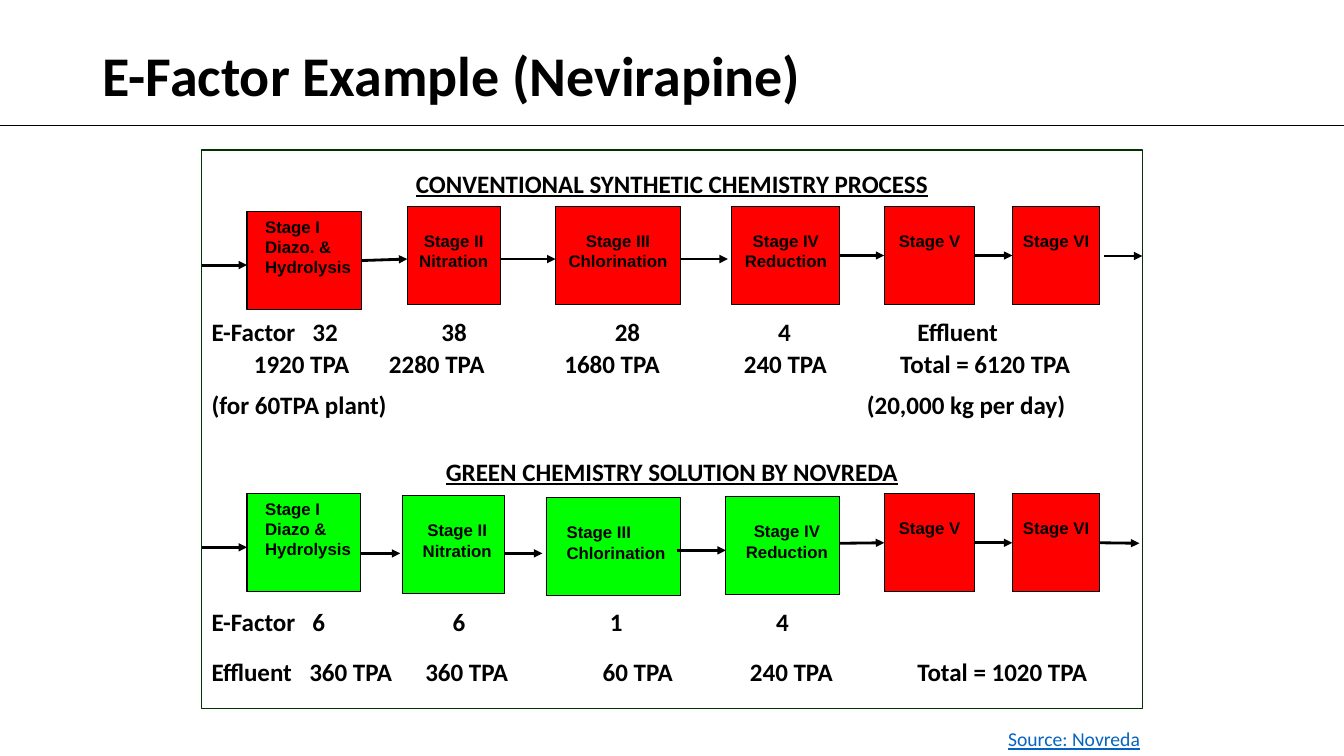
from lxml.etree import SubElement
from pptx import Presentation
from pptx.dml.color import RGBColor
from pptx.enum.shapes import MSO_CONNECTOR as Connector, MSO_SHAPE as Shape
from pptx.enum.text import MSO_ANCHOR as Anchor, PP_ALIGN as Align
from pptx.oxml.ns import qn
from pptx.util import Inches, Pt

BLACK = RGBColor(0x00, 0x00, 0x00)
RED = RGBColor(0xFF, 0x00, 0x00)
GREEN = RGBColor(0x00, 0xFF, 0x00)
DARK_GREEN = RGBColor(0x00, 0x33, 0x00)
LINK_BLUE = RGBColor(0x05, 0x63, 0xC1)

PANEL_LEFT, PANEL_WIDTH = 2, 9.33
ROW_HEIGHT = 0.4
STAGE_HEIGHT = 0.97
JOIN_TOLERANCE = 0.02

CONVENTIONAL_STAGES = [
    ("Stage I\nDiazo. & Hydrolysis", 2.45, 2.1, 1.14, RED, Align.LEFT, 0.18, 0.05),
    ("Stage II\nNitration", 4.04, 2.05, 0.92, RED, Align.CENTER, 0.05, 0.24),
    ("Stage III\nChlorination", 5.51, 2.05, 1.24, RED, Align.CENTER, 0.05, 0.24),
    ("Stage IV\nReduction", 7.26, 2.05, 1.07, RED, Align.CENTER, 0.05, 0.24),
    ("Stage V", 8.77, 2.05, 0.9, RED, Align.CENTER, 0.05, 0.24),
    ("Stage VI", 10.04, 2.05, 0.87, RED, Align.CENTER, 0.05, 0.24),
]
CONVENTIONAL_ARROWS = [
    (2, 2.45, 2.63), (3.59, 4.04, 2.57), (4.97, 5.51, 2.57), (6.75, 7.22, 2.57),
    (8.33, 8.77, 2.54), (9.67, 10.04, 2.54), (10.95, 11.33, 2.54),
]
GREEN_STAGES = [
    ("Stage I\nDiazo &\nHydrolysis", 2.45, 4.9, 1.13, GREEN, Align.LEFT, 0.18, 0.05),
    ("Stage II\nNitration", 3.99, 4.92, 1.01, GREEN, Align.CENTER, 0.13, 0.24),
    ("Stage III\nChlorination", 5.42, 4.94, 1.33, GREEN, Align.LEFT, 0.2, 0.24),
    ("Stage IV\nReduction", 7.2, 4.93, 1.13, GREEN, Align.CENTER, 0.13, 0.24),
    ("Stage V", 8.77, 4.9, 0.9, RED, Align.CENTER, 0.05, 0.24),
    ("Stage VI", 10.04, 4.9, 0.87, RED, Align.CENTER, 0.05, 0.24),
]
GREEN_ARROWS = [
    (2, 2.45, 5.43), (3.58, 3.97, 5.49), (5, 5.38, 5.49), (6.71, 7.2, 5.46),
    (8.33, 8.77, 5.39), (9.67, 10.04, 5.39), (10.91, 11.3, 5.39),
]
HEADINGS = [
    ("CONVENTIONAL SYNTHETIC CHEMISTRY PROCESS", 1.82),
    ("GREEN CHEMISTRY SOLUTION BY NOVREDA", 4.68),
]
VALUE_ROWS = [
    ("E-Factor\t32\t38\t28\t4\tEffluent", 3.29, (1, 2.28, 4, 5.62, 7)),
    ("\t1920 TPA\t2280 TPA\t1680 TPA\t240 TPA\tTotal = 6120 TPA", 3.61,
     (0.42, 1.76, 3.5, 5.28, 6.83)),
    ("(for 60TPA plant)\t(20,000 kg per day)", 4.01, (6.5,)),
    ("E-Factor\t6\t6\t1\t4", 6.17, (1, 2.39, 3.95, 5.6)),
    ("Effluent\t360 TPA\t360 TPA\t60 TPA\t240 TPA\tTotal = 1020 TPA", 6.66,
     (0.97, 2.12, 3.88, 5.34, 7)),
]


class ProcessSlide:
    heading_font = "Calibri"
    stage_font = "Arial"

    def __init__(self, deck):
        self.page = deck.slides.add_slide(deck.slide_layouts[6])
        self.stages = []

    def set_text(self, box, text, size, font, color=BLACK, bold=True, underline=False,
                 align=Align.LEFT, stops=()):
        frame = box.text_frame
        frame.word_wrap = True
        frame.text = text
        for para in frame.paragraphs:
            para.alignment = align
            if stops:
                tabs = SubElement(para._p.get_or_add_pPr(), qn("a:tabLst"))
                for stop in stops:
                    SubElement(tabs, qn("a:tab"), pos=str(Inches(stop)), algn="l")
            for span in para.runs:
                span.font.name = font
                span.font.size = Pt(size)
                span.font.bold = bold
                span.font.underline = underline
                span.font.color.rgb = color

    def label(self, text, left, top, width, height, size, **style):
        box = self.page.shapes.add_textbox(
            Inches(left), Inches(top), Inches(width), Inches(height))
        box.text_frame.vertical_anchor = Anchor.MIDDLE
        self.set_text(box, text, size, self.heading_font, **style)

    def row(self, text, middle, **style):
        self.label(text, PANEL_LEFT, middle - ROW_HEIGHT / 2, PANEL_WIDTH, ROW_HEIGHT,
                   17.9, **style)

    def rectangle(self, left, top, width, height, line_color, line_width, fill=None):
        box = self.page.shapes.add_shape(
            Shape.RECTANGLE, Inches(left), Inches(top), Inches(width), Inches(height))
        box.shadow.inherit = False
        if fill is None:
            box.fill.background()
        else:
            box.fill.solid()
            box.fill.fore_color.rgb = fill
        box.line.color.rgb = line_color
        box.line.width = Pt(line_width)
        return box

    def stage(self, text, left, top, width, fill, align, inset_left, inset_top):
        box = self.rectangle(left, top, width, STAGE_HEIGHT, BLACK, 0.75, fill)
        frame = box.text_frame
        frame.vertical_anchor = Anchor.TOP
        frame.margin_left, frame.margin_top = Inches(inset_left), Inches(inset_top)
        frame.margin_right = frame.margin_bottom = Inches(0.05)
        self.set_text(box, text, 12, self.stage_font, align=align)
        self.stages.append((box, left, left + width, top + STAGE_HEIGHT / 2))

    def line(self, start, end, height, width):
        link = self.page.shapes.add_connector(
            Connector.STRAIGHT, Inches(start), Inches(height), Inches(end), Inches(height))
        link.line.color.rgb = BLACK
        link.line.width = Pt(width)
        SubElement(link._element.spPr, qn("a:effectLst"))
        return link

    def arrow(self, start, end, height):
        link = self.line(start, end, height, 2)
        outline = link._element.spPr.find(qn("a:ln"))
        SubElement(outline, qn("a:tailEnd"), type="triangle")
        for box, left, right, middle in self.stages:
            if abs(middle - height) < JOIN_TOLERANCE:
                if abs(right - start) < JOIN_TOLERANCE:
                    link.begin_connect(box, 3)
                if abs(left - end) < JOIN_TOLERANCE:
                    link.end_connect(box, 1)


def main():
    deck = Presentation()
    deck.slide_width, deck.slide_height = Inches(13.33), Inches(7.5)
    slide = ProcessSlide(deck)
    slide.rectangle(PANEL_LEFT, 1.49, PANEL_WIDTH, 5.54, DARK_GREEN, 1)
    for text, middle in HEADINGS:
        slide.row(text, middle, underline=True, align=Align.CENTER)
    for text, middle, stops in VALUE_ROWS:
        slide.row(text, middle, stops=stops)
    for stage in CONVENTIONAL_STAGES + GREEN_STAGES:
        slide.stage(*stage)
    for arrow in CONVENTIONAL_ARROWS + GREEN_ARROWS:
        slide.arrow(*arrow)
    slide.line(0, 13.33, 1.24, 0.5)
    slide.label("E-Factor Example (Nevirapine)", 0.92, 0.01, 11.5, 1.45, 40)
    slide.label("Source: Novreda", 9.9, 7.16, 1.92, 0.34, 14,
                color=LINK_BLUE, bold=False, underline=True)
    deck.save("out.pptx")


if __name__ == "__main__":
    main()
